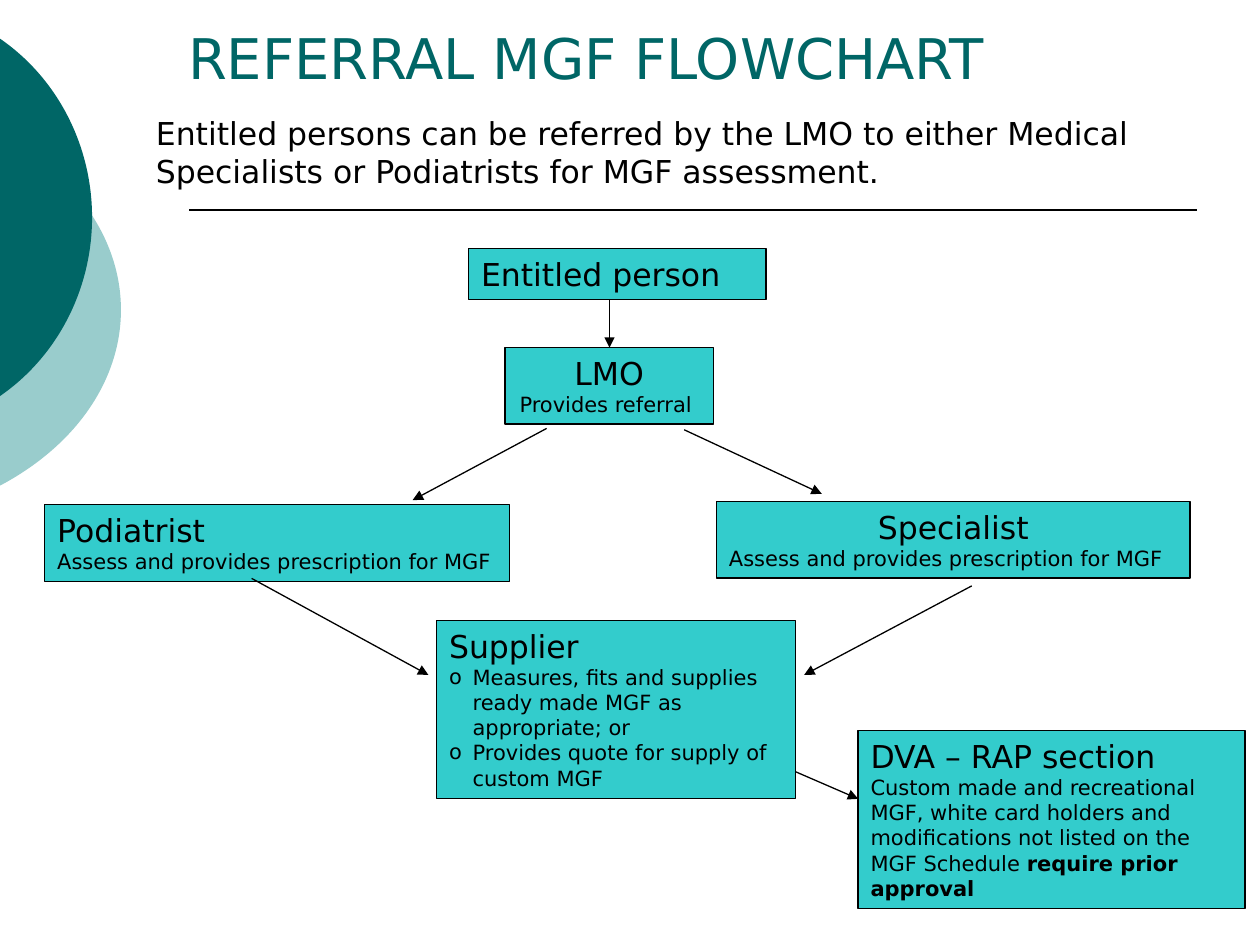
from lxml import etree
from pptx import Presentation
from pptx.dml.color import RGBColor
from pptx.enum.shapes import MSO_CONNECTOR, MSO_SHAPE
from pptx.enum.text import MSO_ANCHOR, MSO_AUTO_SIZE, PP_ALIGN
from pptx.oxml.ns import qn
from pptx.util import Pt

LEFT, CENTER = PP_ALIGN.LEFT, PP_ALIGN.CENTER
BOTTOM, TOP = MSO_ANCHOR.BOTTOM, MSO_ANCHOR.TOP
NO_AUTOSIZE, GROW = MSO_AUTO_SIZE.NONE, MSO_AUTO_SIZE.SHAPE_TO_FIT_TEXT
RECTANGLE, STRAIGHT = MSO_SHAPE.RECTANGLE, MSO_CONNECTOR.STRAIGHT
BLACK = RGBColor(0x00, 0x00, 0x00)
DARK_TEAL = RGBColor(0x00, 0x66, 0x66)
PALE_TEAL = RGBColor(0x99, 0xCC, 0xCC)
TURQUOISE = RGBColor(0x33, 0xCC, 0xCC)
FONT = "DejaVu Sans"
BULLET_INDENT = Pt(13.5)


def write_paragraph(paragraph, text, size, color=BLACK, alignment=LEFT):
    paragraph.text = text
    paragraph.alignment = alignment
    paragraph.font.name = FONT
    paragraph.font.size = Pt(size)
    paragraph.font.color.rgb = color


def add_line(shapes, start, end, width, arrow=False):
    line = shapes.add_connector(STRAIGHT, *(Pt(value) for value in start + end))
    line.line.color.rgb = BLACK
    line.line.width = Pt(width)
    properties = line._element.spPr
    if arrow:
        outline = properties.find(qn("a:ln"))
        etree.SubElement(outline, qn("a:tailEnd"), type="triangle")
    etree.SubElement(properties, qn("a:effectLst"))


presentation = Presentation()
presentation.slide_width, presentation.slide_height = Pt(720), Pt(540)
slide = presentation.slides.add_slide(presentation.slide_layouts[5])
shapes = slide.shapes

# Ellipse segments: frame, middle height, then the upper curve as x and rise above the middle
for (left, top, width, height), middle, curve, color in (
    ((-254.9, 54, 324, 246.2), 177.1,
     [(-0.7, 100.8), (43.2, 77.8), (69.1, 40.3), (69.1, 0)], PALE_TEAL),
    ((-190.8, 0, 243.4, 248.4), 124.2,
     [(-0.7, 102.6), (33.1, 79.6), (52.6, 40.7), (52.6, 0)], DARK_TEAL),
):
    upper = [(x, middle - rise) for x, rise in curve]
    lower = [(x, middle + rise) for x, rise in reversed(curve)]
    builder = shapes.build_freeform(Pt(left), Pt(top))
    builder.add_line_segments([(Pt(left + width), Pt(top + height))])
    segment = builder.convert_to_shape()
    outline = segment._element.spPr.find(".//" + qn("a:path"))
    for line_command in outline.findall(qn("a:lnTo")) + outline.findall(qn("a:moveTo")):
        outline.remove(line_command)
    commands = (("a:moveTo", upper[:1]), ("a:cubicBezTo", upper[1:]), ("a:cubicBezTo", lower[1:]))
    for index, (command, points) in enumerate(commands):
        element = etree.Element(qn(command))
        outline.insert(index, element)
        for x, y in points:
            etree.SubElement(element, qn("a:pt"), x=str(Pt(x - left)), y=str(Pt(y - top)))
    segment.shadow.inherit = False
    segment.fill.solid()
    segment.fill.fore_color.rgb = color
    segment.line.fill.background()

# Title and rule
title = shapes.title
title.left, title.top, title.width, title.height = Pt(100.3), Pt(13.5), Pt(571.7), Pt(42)
title.text_frame.auto_size = NO_AUTOSIZE
title.text_frame.vertical_anchor = BOTTOM
write_paragraph(title.text_frame.paragraphs[0], "REFERRAL MGF FLOWCHART", 32, DARK_TEAL)
add_line(shapes, (108, 120.2), (684, 120.2), 1)

# Introduction
introduction = shapes.add_textbox(Pt(82), Pt(61.7), Pt(603.4), Pt(51))
introduction.text_frame.word_wrap = True
introduction.text_frame.auto_size = GROW
write_paragraph(
    introduction.text_frame.paragraphs[0],
    "Entitled persons can be referred by the LMO to either Medical Specialists "
    "or Podiatrists for MGF assessment.",
    18,
)

# Flowchart boxes: position, heading, heading alignment, details, detail alignment
PRESCRIPTION = "Assess and provides prescription for MGF"
boxes = [
    ((267.8, 142, 170, 29), "Entitled person", LEFT, [], LEFT),
    ((25.6, 288.5, 265.7, 43.7), "Podiatrist", LEFT, [PRESCRIPTION], LEFT),
    ((288.6, 198.7, 119, 43.7), "LMO", CENTER, ["Provides referral "], CENTER),
    ((409.5, 286.6, 270.6, 43.7), "Specialist", CENTER, [PRESCRIPTION], LEFT),
    ((249.5, 354.5, 205.1, 101.7), "Supplier", LEFT, [
        "Measures, fits and supplies ready made MGF as appropriate; or",
        "Provides quote for supply of custom MGF",
    ], LEFT),
    ((490.4, 417.5, 221.1, 101.7), "DVA – RAP section", LEFT, [
        "Custom made and recreational MGF, white card holders and modifications "
        "not listed on the MGF Schedule ",
    ], LEFT),
]
frames = {}
for position, heading, heading_alignment, details, detail_alignment in boxes:
    box = shapes.add_shape(RECTANGLE, *(Pt(value) for value in position))
    box.shadow.inherit = False
    box.fill.solid()
    box.fill.fore_color.rgb = TURQUOISE
    box.line.color.rgb = BLACK
    box.line.width = Pt(0.75)
    frame = frames[heading] = box.text_frame
    frame.word_wrap = True
    frame.auto_size = GROW
    frame.vertical_anchor = TOP
    write_paragraph(frame.paragraphs[0], heading, 18, alignment=heading_alignment)
    for detail in details:
        write_paragraph(frame.add_paragraph(), detail, 12, alignment=detail_alignment)

# Supplier bullets
for paragraph in frames["Supplier"].paragraphs[1:]:
    properties = paragraph._p.get_or_add_pPr()
    properties.set("marL", str(BULLET_INDENT))
    properties.set("indent", str(-BULLET_INDENT))
    properties.insert(0, etree.Element(qn("a:buFont"), typeface=FONT))
    properties.insert(1, etree.Element(qn("a:buChar"), char="o"))

# Emphasis in the approval box
emphasis = frames["DVA – RAP section"].paragraphs[1].add_run()
emphasis.text = "require prior approval"
emphasis.font.bold = True

# Arrows
for start, end in (
    ((348.3, 171.4), (348.3, 198.7)),
    ((312.4, 244.8), (235.8, 285.8)),
    ((391, 245.6), (469.6, 282.2)),
    ((143.8, 330.5), (244.8, 385.7)),
    ((555.3, 334.8), (459.5, 385.7)),
    ((454.6, 441), (490.4, 456.5)),
):
    add_line(shapes, start, end, 0.75, arrow=True)

presentation.save("out.pptx")
